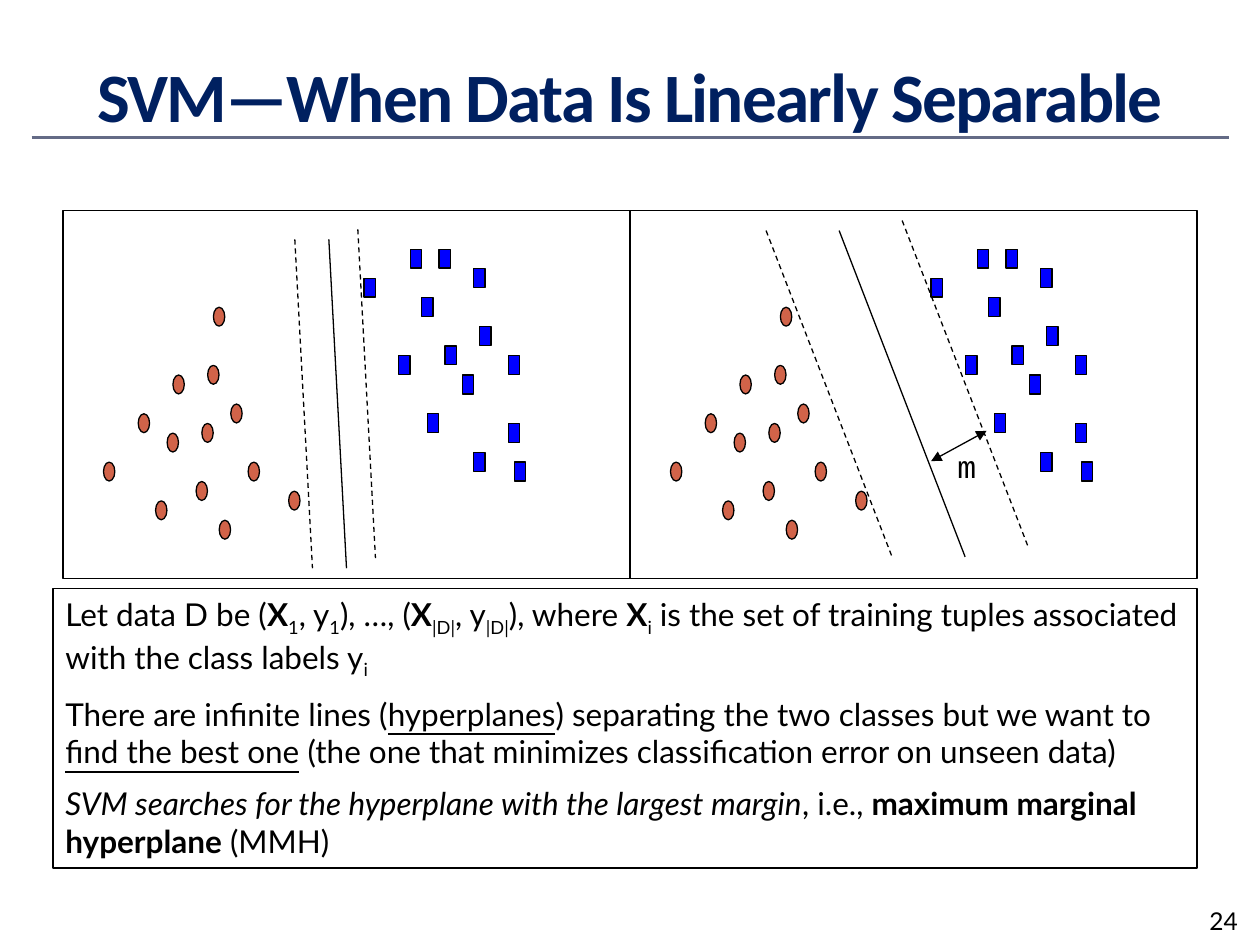
import pptx
import pptx.util
import pptx.dml.color
import pptx.enum.dml
import pptx.enum.shapes
import pptx.enum.text
import pptx.oxml.ns
from dataclasses import dataclass
from lxml import etree
from pptx.util import Inches

SHAPE = pptx.enum.shapes.MSO_SHAPE
ALIGN = pptx.enum.text.PP_ALIGN
ANCHOR = pptx.enum.text.MSO_ANCHOR
qn = pptx.oxml.ns.qn


@dataclass(frozen=True)
class Theme:
    ink: str = "000000"
    title: str = "002060"
    rule: str = "646B86"
    circle: str = "D16349"
    square: str = "0000FF"
    body_font: str = "Lato"
    title_font: str = "Calibri"
    label_font: str = "Courier New"
    title_size: float = 39.6
    body_size: float = 18
    number_size: float = 14
    thin: float = 0.75
    thick: float = 1.5
    para_gap: float = 8


class SlideBuilder:
    def __init__(self, slide, theme):
        self.slide, self.theme = slide, theme
        self.shapes = slide.shapes

    def begin_group(self):
        self.shapes = self.slide.shapes.add_group_shape().shapes

    def end_group(self):
        self.shapes = self.slide.shapes

    def rgb(self, color):
        return pptx.dml.color.RGBColor.from_string(color)

    def shape(self, kind, x, y, w, h, fill=None):
        sp = self.shapes.add_shape(kind, Inches(x), Inches(y), Inches(w), Inches(h))
        sp.shadow.inherit = False
        if fill:
            sp.fill.solid()
            sp.fill.fore_color.rgb = self.rgb(fill)
        else:
            sp.fill.background()
        sp.line.color.rgb = self.rgb(self.theme.ink)
        sp.line.width = pptx.util.Pt(self.theme.thin)
        return sp

    def line(self, x1, y1, x2, y2, color=None, width=None, dashed=False, arrows=False):
        c = self.shapes.add_connector(pptx.enum.shapes.MSO_CONNECTOR.STRAIGHT,
                                      Inches(x1), Inches(y1), Inches(x2), Inches(y2))
        c.line.color.rgb = self.rgb(color or self.theme.ink)
        c.line.width = pptx.util.Pt(width or self.theme.thin)
        if dashed:
            c.line.dash_style = pptx.enum.dml.MSO_LINE.DASH
        if arrows:
            ln = c.line._get_or_add_ln()
            for end in ("a:headEnd", "a:tailEnd"):
                etree.SubElement(ln, qn(end), type="triangle")
        etree.SubElement(c._element.spPr, qn("a:effectLst"))
        return c

    def font(self, p, name, size, color, bold=None):
        p.font.name, p.font.size, p.font.bold = name, pptx.util.Pt(size), bold
        p.font.color.rgb = self.rgb(color)

    def text(self, x, y, w, h, text, name, size, color=None, bold=None,
             align=ALIGN.LEFT, anchor=ANCHOR.TOP, spacing=None):
        sp = self.shapes.add_textbox(Inches(x), Inches(y), Inches(w), Inches(h))
        tf = sp.text_frame
        tf.word_wrap, tf.vertical_anchor = True, anchor
        p = tf.paragraphs[0]
        p.alignment = align
        r = p.add_run()
        r.text = text
        self.font(p, name, size, color or self.theme.ink, bold)
        if spacing:
            r.font._element.set("spc", str(spacing))
        return sp

    def text_panel(self, x, y, w, h, paragraphs):
        """Outlined box; each paragraph is a list of (text, style) runs."""
        t = self.theme
        tf = self.shape(SHAPE.RECTANGLE, x, y, w, h).text_frame
        tf.word_wrap, tf.vertical_anchor = True, ANCHOR.TOP
        for i, runs in enumerate(paragraphs):
            p = tf.add_paragraph() if i else tf.paragraphs[0]
            p.alignment = ALIGN.LEFT
            if i:
                p.space_before = pptx.util.Pt(t.para_gap)
            self.font(p, t.body_font, t.body_size, t.ink)
            for text, style in runs:
                r = p.add_run()
                r.text = text
                if style == "sub":
                    r.font._element.set("baseline", "-25000")
                elif style:
                    setattr(r.font, style, True)

    def scatter(self, x, y, separators, slope):
        """Framed plot with both classes; separators are (x, y, dashed) starts."""
        t = self.theme
        self.begin_group()
        for kind, fill, cells in ((SHAPE.OVAL, t.circle, CIRCLES),
                                  (SHAPE.RECTANGLE, t.square, SQUARES)):
            for col, row in cells:
                self.shape(kind, x + col * COL, y + row * ROW, DOT_W, DOT_H, fill)
        self.shape(SHAPE.RECTANGLE, x, y, PLOT_W, PLOT_H)
        dx, dy = slope
        for sx, sy, dashed in separators:
            self.line(x + sx, y + sy, x + sx + dx, y + sy + dy, dashed=dashed)
        self.end_group()


# Plot geometry: data points sit on a fine grid inside each frame
PLOT_X, PLOT_Y, PLOT_W, PLOT_H = 0.5, 1.67, 4.5, 2.92
COL, ROW = PLOT_W / 98, PLOT_H / 38
DOT_W, DOT_H = 0.09, 0.15
CIRCLES = [(16, 30), (18, 23), (7, 26), (13, 21), (23, 28), (19, 17), (24, 22),
           (25, 16), (29, 20), (32, 26), (27, 32), (39, 29), (26, 10)]
SQUARES = [(58, 15), (52, 7), (60, 4), (63, 21), (62, 9), (66, 14), (65, 4),
           (71, 6), (69, 17), (72, 12), (71, 25), (77, 15), (77, 22), (78, 26)]

BODY = [
    [("Let data D be (", None), ("X", "bold"), ("1", "sub"), (", y", None),
     ("1", "sub"), ("), …, (", None), ("X", "bold"), ("|D|", "sub"),
     (", y", None), ("|D|", "sub"), ("), where ", None), ("X", "bold"), ("i", "sub"),
     (" is the set of training tuples associated with the class labels y", None),
     ("i", "sub")],
    [("There are infinite lines (", None), ("hyperplanes", "underline"),
     (") separating the two classes but we want to ", None),
     ("find the best one", "underline"),
     (" (the one that minimizes classification error on unseen data)", None)],
    [("SVM searches for the hyperplane with the largest margin", "italic"),
     (", i.e., ", None), ("maximum marginal hyperplane", "bold"), (" (MMH)", None)],
]


def main():
    prs = pptx.Presentation()
    prs.slide_width, prs.slide_height = Inches(10), Inches(7.5)
    t = Theme()
    s = SlideBuilder(prs.slides.add_slide(prs.slide_layouts[6]), t)

    # Title, rule and page number
    s.line(0.25, 1.09, 9.75, 1.09, t.rule, t.thick)
    s.text(9.5, 7.14, 0.5, 0.36, "24", t.body_font, t.number_size)
    s.text(0, 0.42, 10, 0.67, "SVM—When Data Is Linearly Separable", t.title_font,
           t.title_size, t.title, True, ALIGN.CENTER, ANCHOR.MIDDLE, spacing=-100)

    # Small margin on the left, large margin on the right
    s.scatter(PLOT_X, PLOT_Y,
              [(2.34, 0.15, True), (1.84, 0.23, True), (2.11, 0.23, False)],
              (0.14, 2.61))
    s.scatter(PLOT_X + PLOT_W, PLOT_Y,
              [(1.08, 0.16, True), (2.16, 0.08, True), (1.66, 0.16, False)],
              (1, 2.59))

    # Margin arrow and its label
    s.line(7.39, 3.66, 7.83, 3.42, arrows=True)
    s.text(7.5, 3.5, 0.58, 0.4, "m", t.label_font, t.body_size)

    # Explanation
    s.text_panel(0.42, 4.67, 9.08, 2.22, BODY)

    prs.save("out.pptx")


if __name__ == "__main__":
    main()
